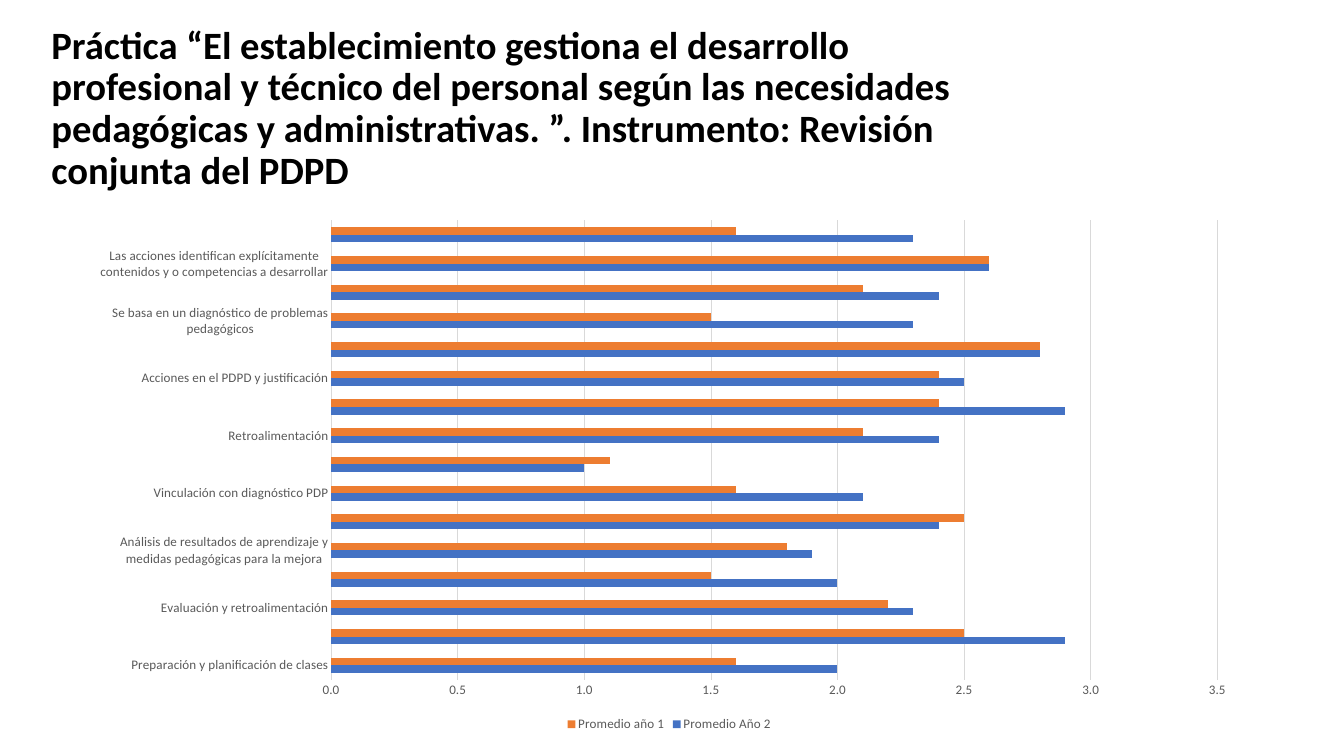
from lxml import etree
from pptx import Presentation
from pptx.chart.data import CategoryChartData
from pptx.dml.color import RGBColor
from pptx.enum.chart import XL_CHART_TYPE, XL_LEGEND_POSITION, XL_TICK_MARK
from pptx.enum.text import MSO_ANCHOR
from pptx.oxml.ns import qn
from pptx.util import Pt

PX = 9525
BLANK_LAYOUT = 6
BAR_CLUSTERED = XL_CHART_TYPE.BAR_CLUSTERED
BOTTOM = XL_LEGEND_POSITION.BOTTOM
NO_TICK = XL_TICK_MARK.NONE
MIDDLE = MSO_ANCHOR.MIDDLE

COLORS = {
    "title": "000000",
    "label": "595959",
    "grid": "D9D9D9",
    "year 1": "ED7D31",
    "year 2": "4472C4",
}

TITLE = (
    "Práctica “El establecimiento gestiona el desarrollo profesional y técnico "
    "del personal según las necesidades pedagógicas y administrativas. ”. "
    "Instrumento: Revisión conjunta del PDPD"
)

# Category, average of year 2, average of year 1 (from the bottom up)
AVERAGES = [
    ("Preparación y planificación de clases", 2, 1.6),
    ("Ejecución de clases", 2.9, 2.5),
    ("Evaluación y retroalimentación", 2.3, 2.2),
    ("Buenas prácticas docentes y déficit en procesos de instalación de prácticas", 2, 1.5),
    ("Análisis de resultados de aprendizaje y medidas pedagógicas para la mejora", 1.9, 1.8),
    ("Definiciones fundamentales", 2.4, 2.5),
    ("Vinculación con diagnóstico PDP", 2.1, 1.6),
    ("Criterios de ingreso y extensión del acompañamiento", 1, 1.1),
    ("Retroalimentación", 2.4, 2.1),
    ("Objetivo en el PDPD y justificación", 2.9, 2.4),
    ("Acciones en el PDPD y justificación", 2.5, 2.4),
    ("Objetivo general relacionado al mejoramiento de competencias docentes", 2.8, 2.8),
    ("Se basa en un diagnóstico de problemas pedagógicos", 2.3, 1.5),
    ("El plan cautela el desarrollo de competencias docentes atingentes a los "
     "problemas pedagógicos diagnosticados", 2.4, 2.1),
    ("Las acciones identifican explícitamente contenidos y o competencias a desarrollar",
     2.6, 2.6),
    ("El plan cautela la existencia de condiciones para que puedan implementarse "
     "sus acciones y para que el desarrollo profesi", 2.3, 1.6),
]


class SlideBuilder:
    def __init__(self, page, font="Calibri"):
        self.page = page
        self.font = font

    def color(self, name):
        return RGBColor.from_string(COLORS[name])

    def style_font(self, font, size, color, bold=False):
        font.name = self.font
        font.size = Pt(size)
        font.bold = bold
        font.color.rgb = self.color(color)

    def style_line(self, line, color):
        line.color.rgb = self.color(color)
        line.width = Pt(0.75)

    def title(self, text, left, top, width, height):
        box = self.page.shapes.add_textbox(left * PX, top * PX, width * PX, height * PX)
        frame = box.text_frame
        frame.word_wrap = True
        frame.vertical_anchor = MIDDLE
        frame.text = text
        para = frame.paragraphs[0]
        para.line_spacing = 0.9
        self.style_font(para.runs[0].font, 41.4, "title", bold=True)

    def bar_chart(self, categories, series, left, top, width, height):
        """Add a bar chart; series is a list of (name, values, color)."""
        data = CategoryChartData(number_format="0.0")
        data.categories = categories
        for name, values, _ in series:
            data.add_series(name, values)
        frame = self.page.shapes.add_chart(
            BAR_CLUSTERED, left * PX, top * PX, width * PX, height * PX, data
        )
        chart = frame.chart
        chart.has_title = False
        self.style_font(chart.font, 14, "label")

        plot = chart.plots[0]
        plot.gap_width = 182
        plot.vary_by_categories = False
        for bars, (_, _, color) in zip(plot.series, series):
            bars.format.fill.solid()
            bars.format.fill.fore_color.rgb = self.color(color)

        chart.has_legend = True
        chart.legend.position = BOTTOM
        chart.legend.include_in_layout = False
        self.style_font(chart.legend.font, 14, "label")

        for axis in (chart.category_axis, chart.value_axis):
            axis.major_tick_mark = axis.minor_tick_mark = NO_TICK
            self.style_font(axis.tick_labels.font, 14, "label")
        self.style_line(chart.category_axis.format.line, "grid")

        scale = chart.value_axis
        scale.minimum_scale, scale.maximum_scale, scale.major_unit = 0, 3.5, 0.5
        scale.tick_labels.number_format = "0.0"
        scale.tick_labels.number_format_is_linked = False
        scale.format.line.fill.background()
        self.style_line(scale.major_gridlines.format.line, "grid")
        return frame

    def place_plot(self, frame, left, top, width, height):
        """Fix the inner plot area, in px from the chart's corner."""
        area = frame.chart.element.find(".//" + qn("c:plotArea"))
        for old in area.findall(qn("c:layout")):
            area.remove(old)
        layout = etree.Element(qn("c:layout"))
        area.insert(0, layout)
        manual = etree.SubElement(layout, qn("c:manualLayout"))
        settings = {
            "layoutTarget": "inner", "xMode": "edge", "yMode": "edge",
            "x": left * PX / frame.width, "y": top * PX / frame.height,
            "w": width * PX / frame.width, "h": height * PX / frame.height,
        }
        for tag, value in settings.items():
            etree.SubElement(manual, qn("c:" + tag)).set("val", str(value))


def main():
    deck = Presentation()
    deck.slide_width, deck.slide_height = 1920 * PX, 1080 * PX
    builder = SlideBuilder(deck.slides.add_slide(deck.slide_layouts[BLANK_LAYOUT]))

    builder.title(TITLE, 64, 52, 1392, 208)
    categories, year_2, year_1 = zip(*AVERAGES)
    series = [("Promedio Año 2", year_2, "year 2"), ("Promedio año 1", year_1, "year 1")]
    frame = builder.bar_chart(categories, series, 128, 300, 1656, 750)
    builder.place_plot(frame, 345, 15, 1266, 656)

    deck.save("out.pptx")


if __name__ == "__main__":
    main()
